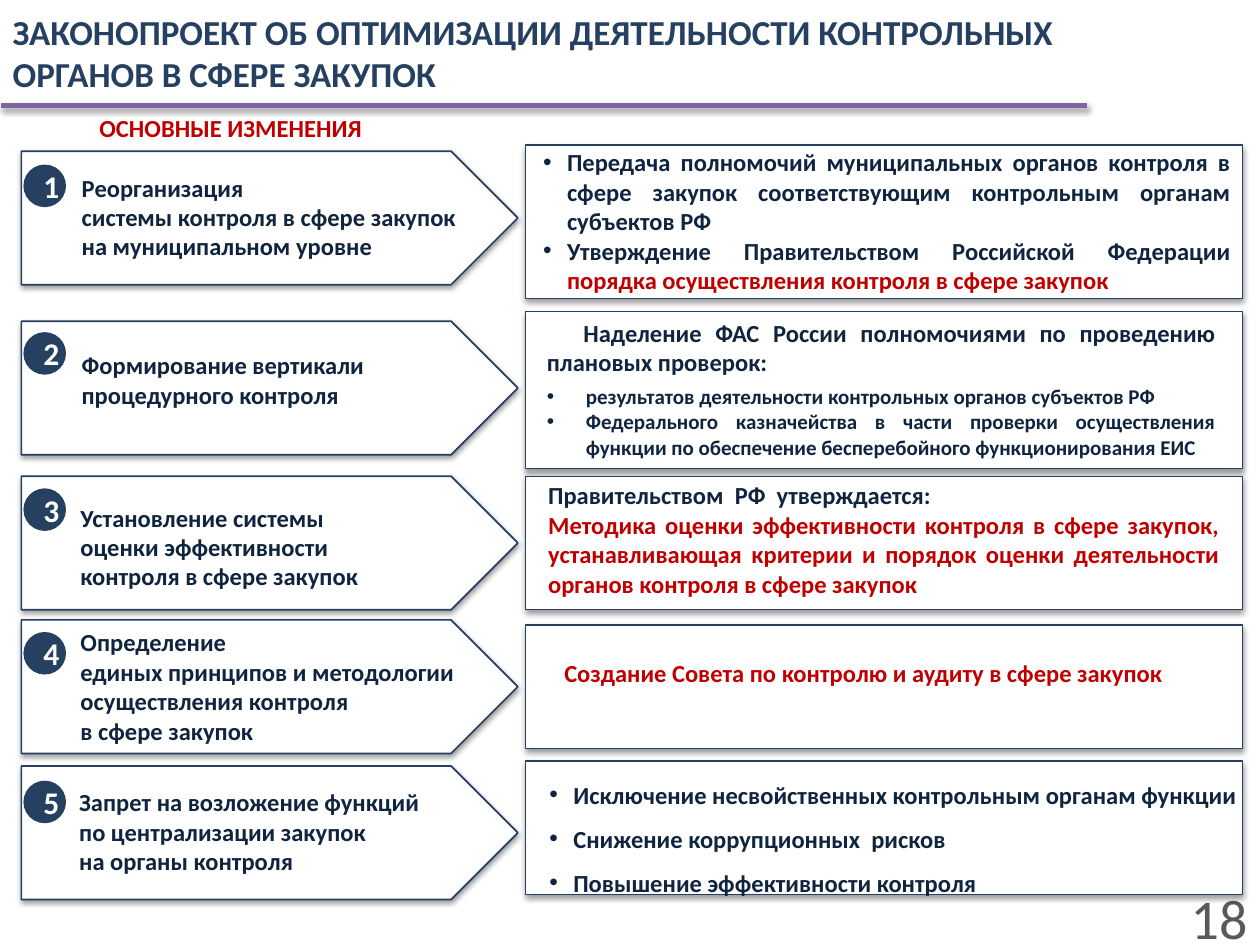
from lxml import etree
from pptx import Presentation
from pptx.dml.color import RGBColor
from pptx.enum.shapes import MSO_CONNECTOR, MSO_SHAPE
from pptx.enum.text import MSO_ANCHOR, MSO_AUTO_SIZE, PP_ALIGN
from pptx.oxml.ns import qn
from pptx.util import Inches, Pt

PENTAGON, RECTANGLE, OVAL = MSO_SHAPE.PENTAGON, MSO_SHAPE.RECTANGLE, MSO_SHAPE.OVAL
TOP, MIDDLE = MSO_ANCHOR.TOP, MSO_ANCHOR.MIDDLE
LEFT, CENTER, RIGHT, JUSTIFY = PP_ALIGN.LEFT, PP_ALIGN.CENTER, PP_ALIGN.RIGHT, PP_ALIGN.JUSTIFY

NAVY = RGBColor(0x25, 0x40, 0x61)
INK = RGBColor(0x0F, 0x24, 0x3E)
RED = RGBColor(0xC0, 0x00, 0x00)
GRAY = RGBColor(0x59, 0x59, 0x59)
PURPLE = RGBColor(0x80, 0x64, 0xA2)
WHITE = RGBColor(0xFF, 0xFF, 0xFF)
FONT = "Calibri"

# Content
TITLE = "ЗАКОНОПРОЕКТ ОБ ОПТИМИЗАЦИИ ДЕЯТЕЛЬНОСТИ КОНТРОЛЬНЫХ ОРГАНОВ В СФЕРЕ ЗАКУПОК"
SUBTITLE = "ОСНОВНЫЕ ИЗМЕНЕНИЯ"
PAGE_NUMBER = "18"

# Arrow top, badge top, text box (left, top, width, height), lines
STEPS = [
    (1.2, 1.32, (0.55, 1.32, 3.19, 0.81),
     ["Реорганизация", "системы контроля в сфере закупок", "на муниципальном уровне"]),
    (2.55, 2.65, (0.55, 2.73, 2.6, 0.57),
     ["Формирование вертикали", "процедурного контроля"]),
    (3.78, 3.89, (0.54, 3.94, 2.43, 0.81),
     ["Установление системы", "оценки эффективности", "контроля в сфере закупок"]),
    (4.92, 5.03, (0.54, 4.93, 3.19, 1.04),
     ["Определение", "единых принципов и методологии осуществления контроля",
      "в сфере закупок"]),
    (6.08, 6.21, (0.53, 6.2, 3.02, 0.81),
     ["Запрет на возложение функций по централизации закупок", "на органы контроля"]),
]

# Card (top, height), text box, anchor, paragraphs as (runs, format)
BULLET = {"align": JUSTIFY, "margin": 0.19, "indent": -0.19, "bullet": True}
SMALL_BULLET = {"align": JUSTIFY, "margin": 0.31, "indent": -0.31, "bullet": True, "size": 12}
SPACED_BULLET = {**BULLET, "align": LEFT, "line_spacing": 1.5}
PLAIN = {"align": JUSTIFY}
SPACED = {"align": JUSTIFY, "space": 4}
DETAILS = [
    ((1.15, 1.22), (4.21, 1.12, 5.66, 1.28), TOP, [
        ([("Передача полномочий муниципальных органов контроля в сфере закупок "
           "соответствующим контрольным органам субъектов РФ", INK)], BULLET),
        ([("Утверждение Правительством Российской Федерации ", INK),
          ("порядка осуществления контроля в сфере закупок", RED)], BULLET)]),
    ((2.47, 1.25), (4.24, 2.47, 5.51, 1.23), MIDDLE, [
        ([("Наделение ФАС России полномочиями по проведению плановых проверок: ", INK)],
         {**SPACED, "indent": 0.29}),
        ([("результатов деятельности контрольных органов субъектов РФ", INK)], SMALL_BULLET),
        ([("Федерального казначейства в части проверки осуществления функции "
           "по обеспечение бесперебойного функционирования ЕИС", INK)], SMALL_BULLET)]),
    ((3.78, 1.06), (4.25, 3.76, 5.53, 1.04), MIDDLE, [
        ([("Правительством  РФ  утверждается:", INK)], PLAIN),
        ([("Методика оценки эффективности контроля в сфере закупок, устанавливающая "
           "критерии и порядок оценки деятельности органов контроля в сфере закупок", RED)],
         PLAIN)]),
    ((4.96, 0.98), (4.38, 5.17, 5.11, 0.34), MIDDLE, [
        ([("Создание Совета по контролю и аудиту в сфере закупок", RED)], SPACED)]),
    ((6.04, 1.06), (4.26, 6.02, 5.8, 1.16), TOP, [
        ([("Исключение несвойственных контрольным органам функции", INK)], SPACED_BULLET),
        ([("Снижение коррупционных  рисков", INK)], SPACED_BULLET),
        ([("Повышение эффективности контроля", INK)], SPACED_BULLET)]),
]


def add_shadow(shape, opacity):
    properties = shape._element.spPr
    effects = properties.find(qn("a:effectLst"))
    if effects is None:
        effects = etree.SubElement(properties, qn("a:effectLst"))
    shadow = etree.SubElement(effects, qn("a:outerShdw"), blurRad="40000", dist="20000",
                              dir="5400000", rotWithShape="0")
    color = etree.SubElement(shadow, qn("a:srgbClr"), val="000000")
    etree.SubElement(color, qn("a:alpha"), val=str(opacity * 1000))


def add_box(shapes, kind, box, fill, line_width, shadow=True):
    shape = shapes.add_shape(kind, *map(Inches, box))
    shape.fill.solid()
    shape.fill.fore_color.rgb = fill
    shape.line.color.rgb = NAVY
    shape.line.width = Pt(line_width)
    shape.shadow.inherit = False
    if shadow:
        add_shadow(shape, 38)
    return shape


def format_paragraph(paragraph, align=LEFT, margin=0, indent=0, bullet=False,
                     space=0, line_spacing=1.0):
    paragraph.alignment = align
    paragraph.line_spacing = line_spacing
    paragraph.space_before = paragraph.space_after = Pt(space)
    properties = paragraph._p.get_or_add_pPr()
    properties.set("marL", str(Inches(margin)))
    properties.set("indent", str(Inches(indent)))
    if bullet:
        etree.SubElement(properties, qn("a:buFont"), typeface="Arial")
        etree.SubElement(properties, qn("a:buChar"), char="•")
    else:
        etree.SubElement(properties, qn("a:buNone"))


def write(shape, paragraphs, anchor=TOP, size=14, bold=True):
    frame = shape.text_frame
    frame.word_wrap = True
    frame.auto_size = MSO_AUTO_SIZE.NONE
    frame.vertical_anchor = anchor
    for index, (runs, style) in enumerate(paragraphs):
        paragraph = frame.add_paragraph() if index else frame.paragraphs[0]
        style = dict(style)
        run_size = style.pop("size", size)
        format_paragraph(paragraph, **style)
        for text, color in runs:
            run = paragraph.add_run()
            run.text = text
            run.font.name = FONT
            run.font.size = Pt(run_size)
            run.font.bold = bold
            run.font.color.rgb = color


def place(shape, box):
    shape.left, shape.top, shape.width, shape.height = map(Inches, box)


def add_text(shapes, box, paragraphs, **options):
    write(shapes.add_textbox(*map(Inches, box)), paragraphs, **options)


presentation = Presentation()
presentation.slide_width, presentation.slide_height = Inches(10), Inches(7.5)
comparison_layout = presentation.slide_layouts[4]
slide = presentation.slides.add_slide(comparison_layout)
shapes = slide.shapes
title, *bodies = list(slide.placeholders)

# Heading and page number
place(title, (0, 0, 8.63, 0.84))
write(title, [([(TITLE, NAVY)], {})], anchor=MIDDLE, size=20)
add_text(shapes, (9.34, 7.05, 0.66, 0.45), [([(PAGE_NUMBER, GRAY)], {"align": RIGHT})],
         anchor=MIDDLE, size=32, bold=False)

# Numbered arrows
for number, (arrow_top, badge_top, text_box, lines) in enumerate(STEPS, 1):
    group = shapes.add_group_shape()
    add_box(group.shapes, PENTAGON, (0.17, arrow_top, 3.94, 1.06), WHITE, 1)
    add_text(group.shapes, text_box, [([(line, INK)], {}) for line in lines])
    badge = add_box(group.shapes, OVAL, (0.2, badge_top, 0.31, 0.31), NAVY, 2, shadow=False)
    write(badge, [([(str(number), WHITE)], {"align": CENTER})], anchor=MIDDLE, size=18)

# Detail cards: lists go in body placeholders, raised above their cards
for (top, height), text_box, anchor, paragraphs in DETAILS:
    add_box(shapes, RECTANGLE, (4.17, top, 5.69, height), WHITE, 0.75)
    if len(paragraphs) > 1:
        body = bodies.pop(0)
        place(body, text_box)
        write(body, paragraphs, anchor=anchor)
        shapes._spTree.append(body._element)
    else:
        add_text(shapes, text_box, paragraphs, anchor=anchor)

# Subtitle and rule under the heading
add_text(shapes, (0.69, 0.84, 2.32, 0.34), [([(SUBTITLE, RED)], SPACED)], anchor=MIDDLE)
rule = shapes.add_connector(MSO_CONNECTOR.STRAIGHT, Inches(0.01), Inches(0.84),
                            Inches(8.63), Inches(0.84))
rule.line.color.rgb = PURPLE
rule.line.width = Pt(3)
add_shadow(rule, 35)

presentation.save("out.pptx")
